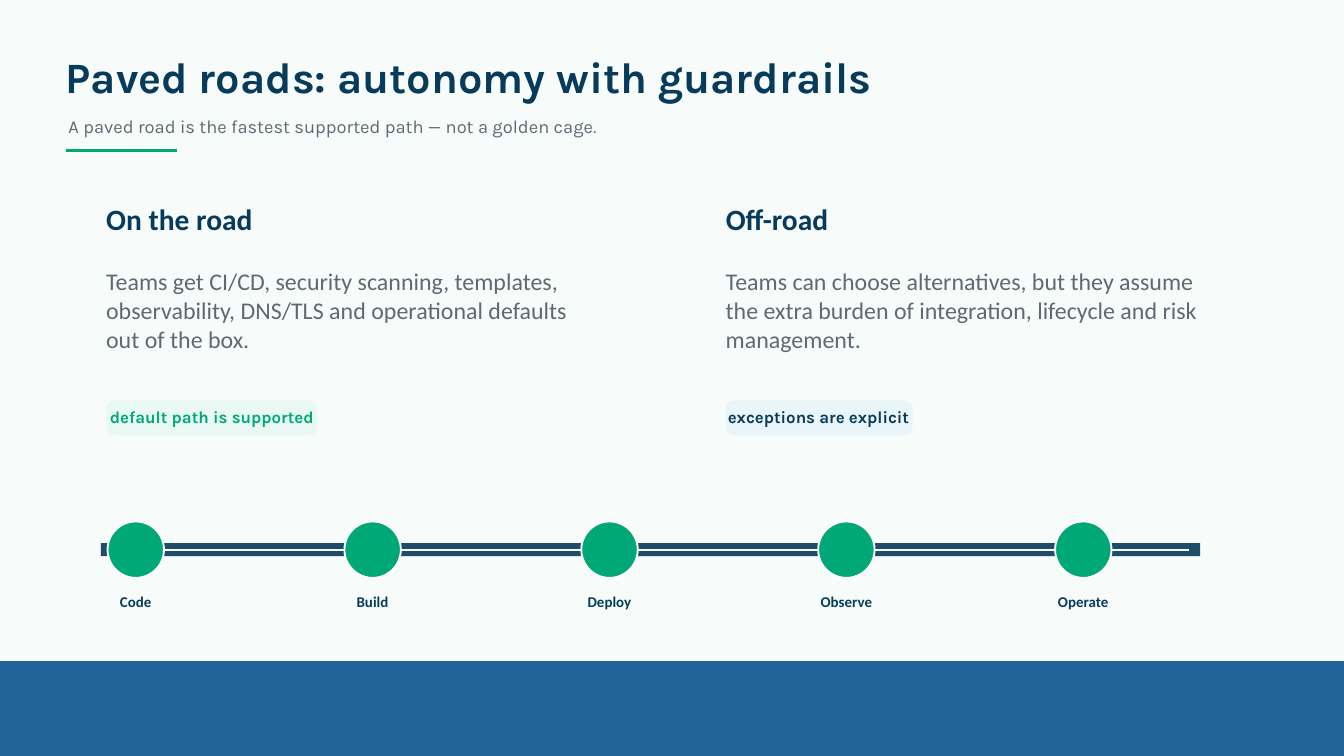
"""Build the paved roads slide with two options and a delivery timeline."""
from dataclasses import dataclass

import lxml.etree
import pptx
import pptx.dml.color
import pptx.enum.shapes
import pptx.enum.text
import pptx.oxml.ns
import pptx.presentation
import pptx.shapes.autoshape
import pptx.shapes.connector
import pptx.slide
import pptx.util

Inches = pptx.util.Inches
Pt = pptx.util.Pt
Shape = pptx.enum.shapes.MSO_SHAPE
Align = pptx.enum.text.PP_ALIGN
qn = pptx.oxml.ns.qn

COLORS = {
    "background": "F7FBFA",
    "footer": "20649A",
    "navy": "073B5C",
    "gray": "5E6A72",
    "green": "00A878",
    "white": "FFFFFF",
    "mint": "EAF8F4",
    "ice": "EAF5FA",
}


@dataclass(frozen=True)
class Box:
    left: float
    top: float
    width: float
    height: float

    def lengths(self) -> tuple[int, int, int, int]:
        return Inches(self.left), Inches(self.top), Inches(self.width), Inches(self.height)


@dataclass(frozen=True)
class Style:
    font: str
    size: float
    color: str
    bold: bool = False
    align: Align = Align.LEFT


@dataclass(frozen=True)
class Option:
    left: float
    heading: str
    body: str
    body_width: float
    tag: str
    tag_width: float
    tag_fill: str
    tag_color: str
    tag_text: Box


TITLE = Style("Karla", 23.2, "navy", bold=True)
SUBTITLE = Style("Karla", 9.8, "gray")
HEADING = Style("Calibri", 15.8, "navy", bold=True)
BODY = Style("Calibri", 12.8, "gray")
STAGE = Style("Calibri", 8, "navy", bold=True, align=Align.CENTER)

STAGES = ("Code", "Build", "Deploy", "Observe", "Operate")
FIRST_STAGE_X = 1.01
STAGE_STEP = 1.7625
ROAD_Y = 4.09
MARKER_SIZE = 0.42
LABEL_WIDTH = 0.84

OPTIONS = (
    Option(0.79, "On the road",
           "Teams get CI/CD, security scanning, templates, observability, "
           "DNS/TLS and operational defaults out of the box.",
           3.6, "default path is supported", 1.57, "mint", "green",
           Box(0.6, 3.07, 1.95, 0.07)),
    Option(5.4, "Off-road",
           "Teams can choose alternatives, but they assume the extra burden "
           "of integration, lifecycle and risk management.",
           3.56, "exceptions are explicit", 1.39, "ice", "navy",
           Box(5.31, 3, 1.56, 0.2)),
)


def rgb(color: str) -> pptx.dml.color.RGBColor:
    """Return the named palette color."""
    return pptx.dml.color.RGBColor.from_string(COLORS[color])


def add_text(slide: pptx.slide.Slide, box: Box, text: str, style: Style) -> None:
    """Add a wrapped, vertically centered text box without insets."""
    frame = slide.shapes.add_textbox(*box.lengths()).text_frame
    frame.word_wrap = True
    frame.vertical_anchor = pptx.enum.text.MSO_ANCHOR.MIDDLE
    frame.margin_left = frame.margin_top = frame.margin_right = frame.margin_bottom = 0
    paragraph = frame.paragraphs[0]
    paragraph.alignment = style.align
    run = paragraph.add_run()
    run.text = text
    run.font.name = style.font
    run.font.size = Pt(style.size)
    run.font.bold = style.bold
    run.font.color.rgb = rgb(style.color)


def add_filled(slide: pptx.slide.Slide, kind: Shape, box: Box,
               fill: str) -> pptx.shapes.autoshape.Shape:
    """Add a flat shape without an outline."""
    shape = slide.shapes.add_shape(kind, *box.lengths())
    shape.shadow.inherit = False
    shape.fill.solid()
    shape.fill.fore_color.rgb = rgb(fill)
    shape.line.fill.background()
    return shape


def add_line(slide: pptx.slide.Slide, start: float, end: float, y: float,
             color: str, width: float) -> pptx.shapes.connector.Connector:
    """Add a flat horizontal line."""
    line = slide.shapes.add_connector(
        pptx.enum.shapes.MSO_CONNECTOR.STRAIGHT,
        Inches(start), Inches(y), Inches(end), Inches(y))
    line.line.color.rgb = rgb(color)
    line.line.width = Pt(width)
    properties = line._element.find(qn("p:spPr"))
    lxml.etree.SubElement(properties, qn("a:effectLst"))
    return line


def add_road(slide: pptx.slide.Slide) -> None:
    """Draw the road with its center line and labeled stages."""
    road = add_line(slide, 0.75, 8.93, ROAD_Y, "navy", 7)
    color = next(road._element.iter(qn("a:srgbClr")))
    lxml.etree.SubElement(color, qn("a:alpha")).set("val", "90000")
    add_line(slide, 0.82, 8.85, ROAD_Y, "white", 1.2)
    for index, stage in enumerate(STAGES):
        center = FIRST_STAGE_X + index * STAGE_STEP
        marker = add_filled(
            slide, Shape.OVAL,
            Box(center - MARKER_SIZE / 2, ROAD_Y - MARKER_SIZE / 2, MARKER_SIZE, MARKER_SIZE),
            "green")
        marker.line.color.rgb = rgb("white")
        marker.line.width = Pt(1)
        add_text(slide, Box(center - LABEL_WIDTH / 2, 4.39, LABEL_WIDTH, 0.17), stage, STAGE)


def add_option(slide: pptx.slide.Slide, option: Option) -> None:
    """Draw one option with its heading, body and tag."""
    add_text(slide, Box(option.left, 1.5, 2.62, 0.26), option.heading, HEADING)
    add_text(slide, Box(option.left, 1.91, option.body_width, 0.79), option.body, BODY)
    tag = add_filled(slide, Shape.ROUNDED_RECTANGLE,
                     Box(option.left, 2.98, option.tag_width, 0.26), option.tag_fill)
    tag.adjustments[0] = 0.235
    add_text(slide, option.tag_text, option.tag,
             Style("Karla", 9, option.tag_color, bold=True, align=Align.CENTER))


def build() -> pptx.presentation.Presentation:
    """Return the presentation with its single slide."""
    deck = pptx.Presentation()
    deck.slide_width = Inches(10)
    deck.slide_height = Inches(5.625)
    slide = deck.slides.add_slide(deck.slide_layouts[6])
    slide.background.fill.solid()
    slide.background.fill.fore_color.rgb = rgb("background")
    add_filled(slide, Shape.RECTANGLE, Box(0, 4.92, 10, 0.71), "footer")
    add_text(slide, Box(0.49, 0.36, 8.03, 0.41),
             "Paved roads: autonomy with guardrails", TITLE)
    add_text(slide, Box(0.51, 0.82, 7.5, 0.24),
             "A paved road is the fastest supported path — not a golden cage.", SUBTITLE)
    add_line(slide, 0.49, 1.32, 1.12, "green", 2)
    add_road(slide)
    for option in OPTIONS:
        add_option(slide, option)
    return deck


if __name__ == "__main__":
    build().save("out.pptx")
